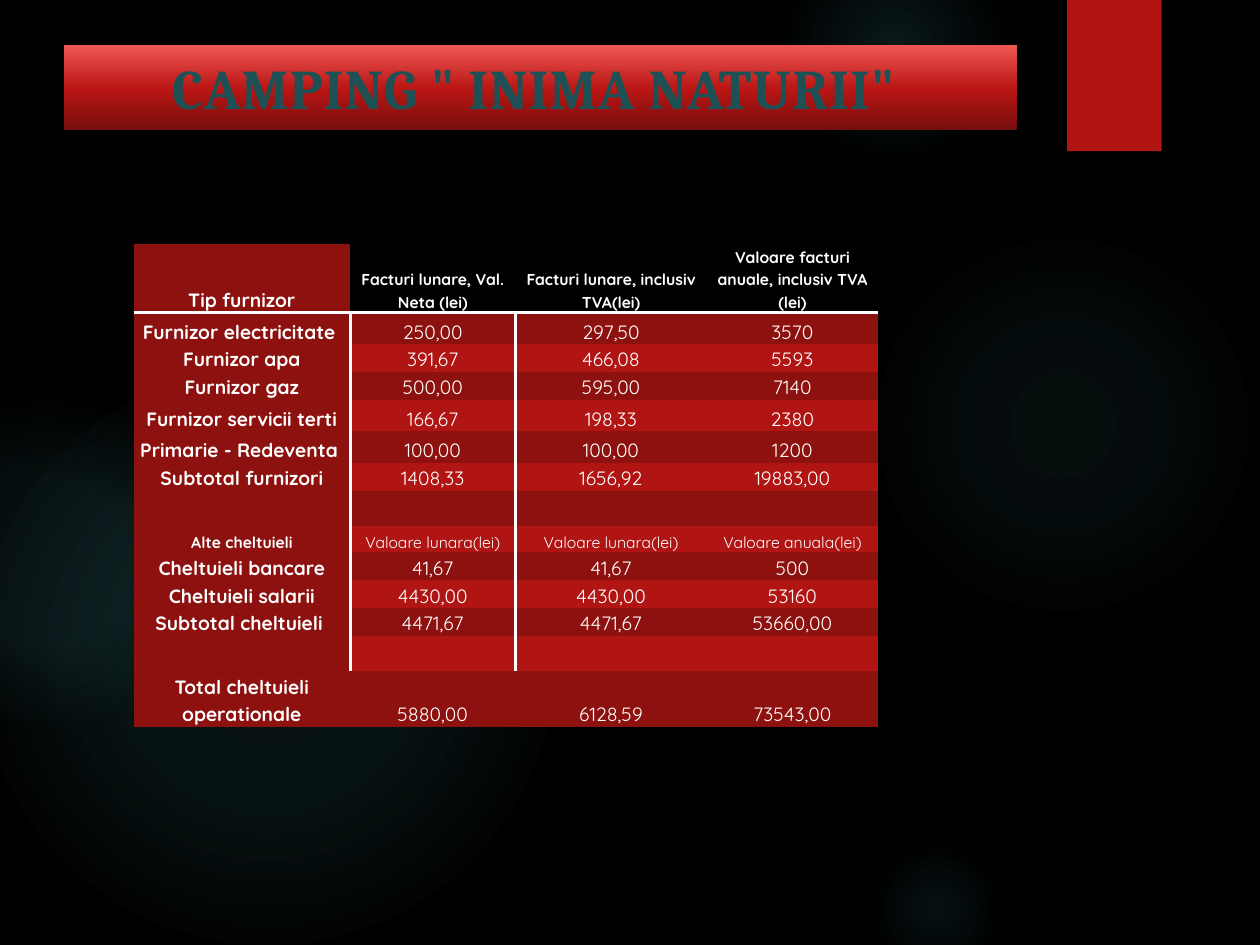
"""Build the camping operating-cost slide with its supplier and expense table."""
from lxml import etree
from pptx import Presentation, util as u
from pptx.dml.color import RGBColor
from pptx.enum import shapes, text
from pptx.oxml import parse_xml
from pptx.oxml.ns import nsdecls, qn

BLACK = RGBColor(0x00, 0x00, 0x00)
WHITE = RGBColor(0xFF, 0xFF, 0xFF)
RED = RGBColor(0xB0, 0x15, 0x13)
DARK_RED = RGBColor(0x8D, 0x11, 0x0F)
TEAL = RGBColor(0x1E, 0x51, 0x55)
GLOW = RGBColor(0x50, 0xB9, 0xC1)

TITLE = 'CAMPING " INIMA NATURII" '
TITLE_STOPS = [(0, "760E0D", 100), (48, "B91614", 100), (100, "ED5654", 100)]
GLOWS = [
    (6.89, 1.83, 3.08, 7, 6, 69),
    (6.22, -0.5, 1.75, 14, 7, 73),
    (6.89, 6.67, 1.08, 9, 5, 66),
    (-0.17, 2.92, 4.58, 11, 10, 75),
    (-0.92, 3.17, 2.58, 8, 8, 72),
]
COLUMN_WIDTHS = [1.72, 1.31, 1.52, 1.36]
SMALL_ROWS = {"Alte cheltuieli"}
COSTS = [
    (0.44, "Tip furnizor", "Facturi lunare, Val. Neta (lei)",
     "Facturi lunare, inclusiv TVA(lei)", "Valoare facturi anuale, inclusiv TVA (lei)"),
    (0.25, "Furnizor electricitate ", "250,00", "297,50", "3570"),
    (0.18, "Furnizor apa", "391,67", "466,08", "5593"),
    (0.18, "Furnizor gaz", "500,00", "595,00", "7140"),
    (0.25, "Furnizor servicii terti", "166,67", "198,33", "2380"),
    (0.25, "Primarie - Redeventa ", "100,00", "100,00", "1200"),
    (0.18, "Subtotal furnizori", "1408,33", "1656,92", "19883,00"),
    (0.18, "", "", "", ""),
    (0.21, "Alte cheltuieli", "Valoare lunara(lei)", "Valoare lunara(lei)", "Valoare anuala(lei)"),
    (0.18, "Cheltuieli bancare", "41,67", "41,67", "500"),
    (0.18, "Cheltuieli salarii", "4430,00", "4430,00", "53160"),
    (0.18, "Subtotal cheltuieli ", "4471,67", "4471,67", "53660,00"),
    (0.18, "", "", "", ""),
    (0.36, "Total cheltuieli operationale", "5880,00", "6128,59", "73543,00"),
]


def write(frame, words, *, size, font, color, bold=False, line_spacing=None, tracking=None):
    paragraph = frame.paragraphs[0]
    paragraph.alignment = text.PP_ALIGN.CENTER
    paragraph.line_spacing = line_spacing
    run = paragraph.add_run()
    run.text = words
    run.font.size, run.font.name, run.font.bold = u.Pt(size), font, bold
    run.font.color.rgb = color
    if tracking:
        run.font._element.set("spc", str(tracking))


def fill_gradient(shape, stops, direction):
    marks = "".join(
        f'<a:gs pos="{place * 1000}"><a:srgbClr val="{color}">'
        f'<a:alpha val="{alpha * 1000}"/></a:srgbClr></a:gs>'
        for place, color, alpha in stops)
    gradient = parse_xml(
        f'<a:gradFill {nsdecls("a")} rotWithShape="1"><a:gsLst>{marks}</a:gsLst>{direction}</a:gradFill>')
    shape._element.spPr.find(qn("a:prstGeom")).addnext(gradient)


def add_plain(slide, kind, left, top, width, height):
    shape = slide.shapes.add_shape(kind, *map(u.Inches, (left, top, width, height)))
    shape.shadow.inherit = False
    shape.line.fill.background()
    return shape


def add_backdrop(slide):
    slide.background.fill.solid()
    slide.background.fill.fore_color.rgb = BLACK
    radial = ('<a:path path="circle"><a:fillToRect l="50000" t="50000" r="50000" b="50000"/>'
              '</a:path>')
    for left, top, diameter, core, middle, edge in GLOWS:
        glow = add_plain(slide, shapes.MSO_SHAPE.OVAL, left, top, diameter, diameter)
        fill_gradient(glow, [(0, GLOW, core), (36, GLOW, middle), (edge, GLOW, 0)], radial)
    ribbon = add_plain(slide, shapes.MSO_SHAPE.RECTANGLE, 8.47, 0, 0.75, 1.2)
    ribbon.fill.solid()
    ribbon.fill.fore_color.rgb = RED


def add_title(slide):
    title = slide.shapes.title
    title.left, title.top, title.width, title.height = map(u.Inches, (0.51, 0.36, 7.56, 0.67))
    slide.shapes._spTree.append(title._element)
    geometry = parse_xml(f'<a:prstGeom {nsdecls("a")} prst="rect"><a:avLst/></a:prstGeom>')
    title._element.spPr.append(geometry)
    fill_gradient(title, TITLE_STOPS, '<a:lin ang="16200000" scaled="0"/>')
    title.text_frame.vertical_anchor = text.MSO_ANCHOR.MIDDLE
    title.text_frame.auto_size = text.MSO_AUTO_SIZE.NONE
    write(title.text_frame, TITLE, size=32, font="Cambria", color=TEAL, bold=True, tracking=50)


def add_border(cell, side):
    border = parse_xml(
        f'<a:{side} {nsdecls("a")} w="{u.Pt(2)}"><a:solidFill><a:srgbClr val="{WHITE}"/>'
        f'</a:solidFill></a:{side}>')
    cell._tc.get_or_add_tcPr().insert(0, border)


def cell_color(row, column):
    if column == 0:
        return DARK_RED
    if row == 0:
        return BLACK
    return DARK_RED if row % 2 else RED


def add_costs(slide):
    frame = slide.shapes.add_table(
        len(COSTS), len(COLUMN_WIDTHS), *map(u.Inches, (1.06, 1.94, 5.91, 3.6)))
    table = frame.table
    table.first_row = table.horz_banding = False
    style = table._tbl.tblPr.find(qn("a:tableStyleId"))
    style.text = "{2D5ABB26-0587-4C30-8999-92F81FD0307C}"
    for column, width in zip(table.columns, COLUMN_WIDTHS):
        column.width = u.Inches(width)
    last = len(COSTS) - 1
    for row, (height, *entries) in enumerate(COSTS):
        table.rows[row].height = u.Inches(height)
        for column, entry in enumerate(entries):
            cell = table.cell(row, column)
            cell.margin_left = cell.margin_right = u.Inches(0.05)
            cell.margin_top = cell.margin_bottom = 0
            cell.vertical_anchor = text.MSO_ANCHOR.BOTTOM
            cell.fill.solid()
            cell.fill.fore_color.rgb = cell_color(row, column)
            small = entries[0] in SMALL_ROWS or (row == 0 and column > 0)
            write(cell.text_frame, entry, size=9 if small else 11, font="Quicksand", color=WHITE,
                  bold=row == 0 or column == 0, line_spacing=1.15 if entry else None)
            if row == 0:
                add_border(cell, "lnB")
            elif column == 0 and row < last:
                add_border(cell, "lnR")
    for row in (*range(1, last),):
        add_border(table.cell(row, 1), "lnL")


def main():
    deck = Presentation()
    deck.slide_width, deck.slide_height = u.Inches(10), u.Inches(7.5)
    slide = deck.slides.add_slide(deck.slide_layouts[5])
    add_backdrop(slide)
    add_title(slide)
    add_costs(slide)
    deck.save("out.pptx")


if __name__ == "__main__":
    main()
